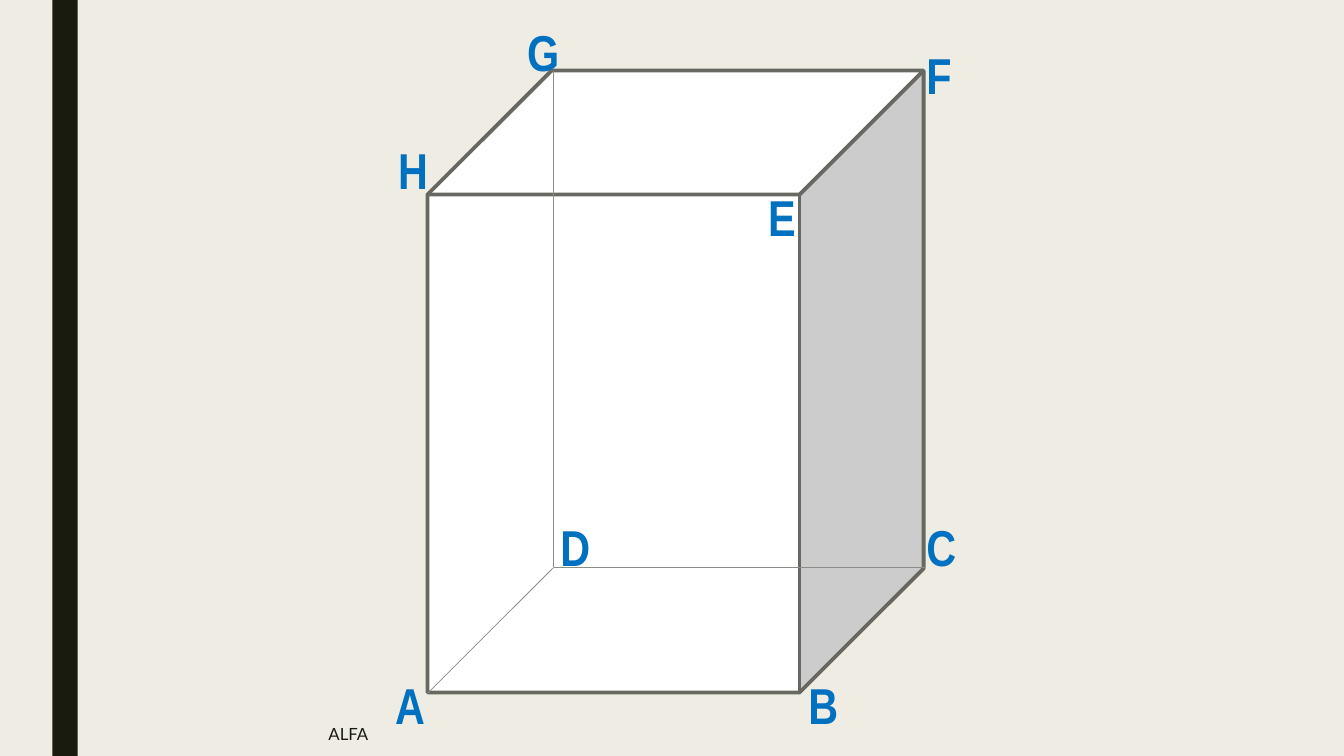
import pptx
import pptx.util
import pptx.dml.color
import pptx.enum.shapes
import pptx.enum.text
import pptx.oxml.ns
import lxml.etree

Inches = pptx.util.Inches


def color(hex_code):
    return pptx.dml.color.RGBColor.from_string(hex_code)


def add_text(page, text, left, top, width, height, font, size, hex_code):
    box = page.shapes.add_textbox(Inches(left), Inches(top), Inches(width), Inches(height))
    span = box.text_frame.paragraphs[0].add_run()
    span.text = text
    span.font.name = font
    span.font.size = pptx.util.Pt(size)
    span.font.color.rgb = color(hex_code)
    return box.text_frame, span


deck = pptx.Presentation()
deck.slide_width = Inches(13.33)
deck.slide_height = Inches(7.5)
page = deck.slides.add_slide(deck.slide_layouts[6])
page.background.fill.solid()
page.background.fill.fore_color.rgb = color("EFEDE3")

# Dark band on the left
band = page.shapes.add_shape(
    pptx.enum.shapes.MSO_SHAPE.RECTANGLE, Inches(0.52), 0, Inches(0.25), Inches(7.5))
band.shadow.inherit = False
band.fill.solid()
band.fill.fore_color.rgb = color("191B0E")
band.line.fill.background()

# Prism with its visible edges
prism = page.shapes.add_shape(
    pptx.enum.shapes.MSO_SHAPE.CUBE, Inches(4.24), Inches(0.7), Inches(4.92), Inches(6.17))
prism.shadow.inherit = False
prism.fill.solid()
prism.fill.fore_color.rgb = color("FFFFFF")
prism.line.color.rgb = color("686863")
prism.line.width = pptx.util.Pt(2.75)

# Hidden edges, all meeting at vertex D
vertex_d = (5.49, 5.63)
for x, y in [(5.49, 0.7), (4.24, 6.88), (9.17, 5.63)]:
    edge = page.shapes.add_connector(
        pptx.enum.shapes.MSO_CONNECTOR.STRAIGHT,
        Inches(x), Inches(y), Inches(vertex_d[0]), Inches(vertex_d[1]))
    edge.line.color.rgb = color("8C8D86")
    edge.line.width = pptx.util.Pt(0.5)
    lxml.etree.SubElement(edge._element.spPr, pptx.oxml.ns.qn("a:effectLst"))

# Vertex letters: left, top, width
vertices = {
    "A": (3.82, 6.64, 0.5),
    "B": (7.92, 6.64, 0.5),
    "D": (5.46, 5.07, 0.5),
    "C": (9.09, 5.07, 0.5),
    "E": (7.52, 1.8, 0.48),
    "F": (9.09, 0.39, 0.45),
    "G": (5.13, 0.16, 0.52),
    "H": (3.85, 1.33, 0.5),
}
for letter, (left, top, width) in vertices.items():
    frame, span = add_text(page, letter, left, top, width, 0.71, "Arial Narrow", 36, "0070C0")
    frame.word_wrap = False
    frame.auto_size = pptx.enum.text.MSO_AUTO_SIZE.SHAPE_TO_FIT_TEXT
    span.font.bold = True

# Footer
frame, span = add_text(page, "ALFA", 3.16, 7.06, 6.87, 0.44, "Lato", 12, "191B0E")
frame.word_wrap = True
frame.vertical_anchor = pptx.enum.text.MSO_ANCHOR.MIDDLE

deck.save("out.pptx")
